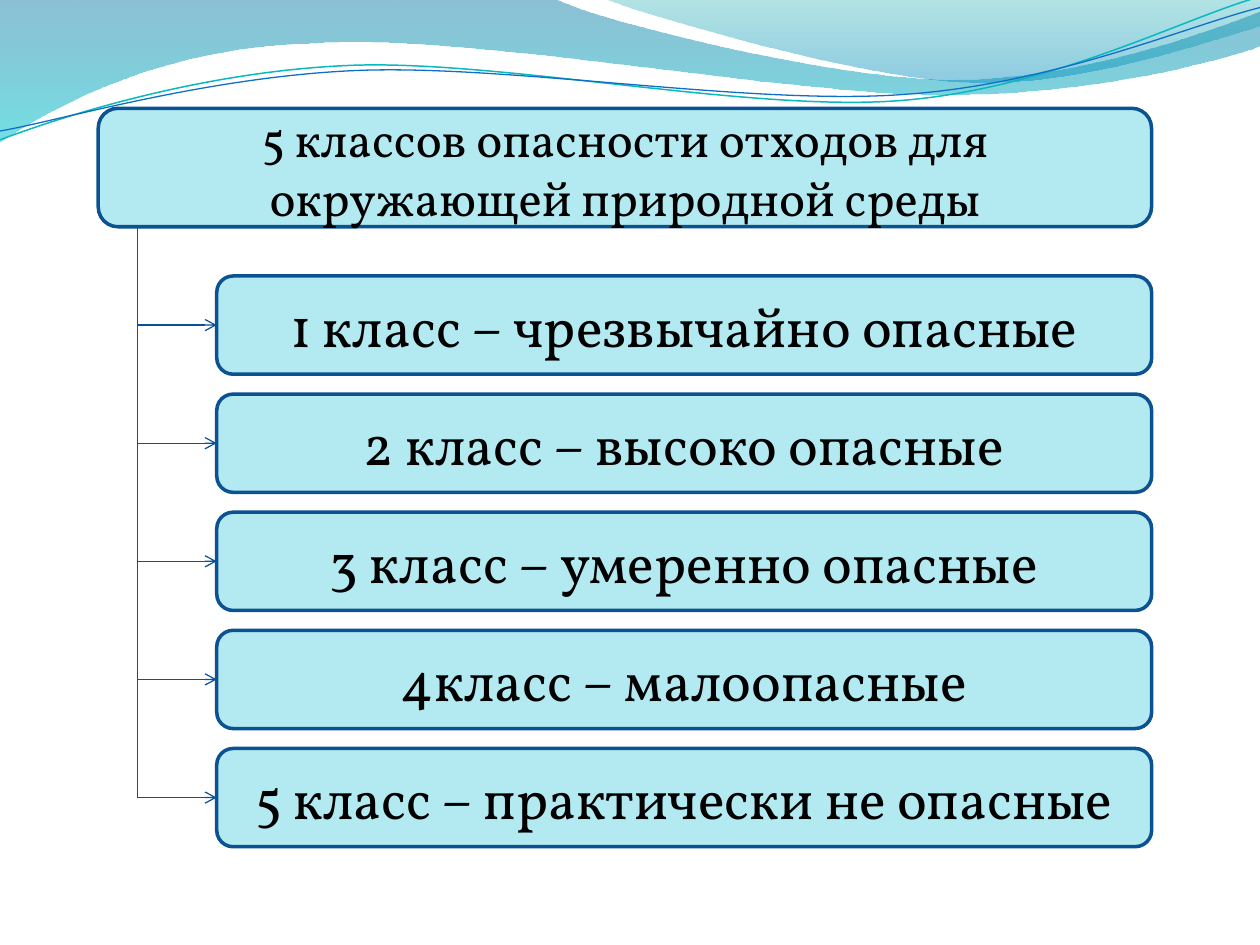
from lxml.etree import SubElement
from pptx import Presentation
from pptx.dml.color import RGBColor
from pptx.enum.shapes import MSO_CONNECTOR as Connector, MSO_SHAPE as Shape
from pptx.enum.text import MSO_ANCHOR as Anchor, PP_ALIGN as Align
from pptx.oxml.ns import qn
from pptx.util import Inches, Pt

FONT = "Vollkorn"
BLACK = RGBColor(0x00, 0x00, 0x00)
BOX_FILL = RGBColor(0xB3, 0xEA, 0xF2)
BOX_LINE = RGBColor(0x0B, 0x52, 0x92)
ARROW_LINE = RGBColor(0x09, 0x52, 0x95)
WAVE_BLUE = RGBColor(0x00, 0x74, 0xA1)
WAVE_CYAN = RGBColor(0x00, 0xC6, 0xCF)
CREST_TEAL = RGBColor(0x00, 0xA1, 0xA9)
CREST_BLUE = RGBColor(0x00, 0x8B, 0xBF)
CURVE_TEAL = RGBColor(0x0A, 0xB8, 0xBF)
CURVE_BLUE = RGBColor(0x0F, 0x6F, 0xC6)

HEADING = "5 классов опасности отходов для окружающей природной среды"
CLASSES = [
    "1 класс – чрезвычайно опасные",
    "2 класс – высоко опасные",
    "3 класс – умеренно опасные",
    "4класс – малоопасные",
    "5 класс – практически не опасные",
]

# Each outline is a start point, then lines (x, y) and
# Bezier curves (two control points and an end point), in inches.
WAVE = [
    (0, 0), (4.4, -0.01),
    (4.76, 0.17, 6.64, 0.63, 7.58, 0.63), (8.53, 0.63, 9.58, 0.26, 10, 0.09),
    (10.01, 0.36),
    (9.83, 0.44, 8.7, 0.76, 7.46, 0.75), (6.22, 0.75, 3.82, 0.28, 2.57, 0.34),
    (1.29, 0.36, 0.46, 0.83, -0.01, 1.13),
]
CREST = [
    (4.79, -0.01),
    (5.09, 0.11, 6.82, 0.62, 7.69, 0.65), (8.56, 0.69, 9.61, 0.32, 10, 0.21),
    (10, 0),
]
TEAL_CURVE = [
    (0, 1.11),
    (0.48, 0.93, 1.58, 0.57, 2.77, 0.52), (3.95, 0.47, 5.93, 0.89, 7.13, 0.8),
    (8.33, 0.71, 9.38, 0.15, 9.98, -0.02),
]
BLUE_CURVE = [
    (0, 1.04),
    (0.47, 0.96, 1.64, 0.61, 2.83, 0.56), (4.03, 0.51, 5.97, 0.84, 7.17, 0.75),
    (8.36, 0.67, 9.41, 0.21, 10, 0.06),
]


def add_outline(slide, left, top, outline, close):
    """Build the outline from all its points, then bend the curve segments."""
    points = [(left + Inches(x), top + Inches(y))
              for segment in outline
              for x, y in zip(segment[::2], segment[1::2])]
    builder = slide.shapes.build_freeform(*points[0])
    builder.add_line_segments(points[1:], close=close)
    shape = builder.convert_to_shape()
    shape.shadow.inherit = False

    line_nodes = iter(list(shape._element.spPr.iter(qn("a:lnTo"))))
    for segment in outline[1:]:
        node = next(line_nodes)
        if len(segment) == 6:
            node.tag = qn("a:cubicBezTo")
            for _ in range(2):
                extra = next(line_nodes)
                node.append(extra[0])
                extra.getparent().remove(extra)
    return shape


def add_wave(slide, left, top, outline, stops):
    """Add an area with a vertical gradient of (colour, opacity percent) stops."""
    wave = add_outline(slide, left, top, outline, close=True)
    wave.line.fill.background()
    wave.fill.gradient()
    wave.fill.gradient_angle = 270
    for stop, (color, _) in zip(wave.fill.gradient_stops, stops):
        stop.color.rgb = color
    for node, (_, opacity) in zip(wave._element.spPr.iter(qn("a:srgbClr")), stops):
        SubElement(node, qn("a:alpha"), val=str(opacity * 1000))


def add_curve(slide, left, top, outline, color, width):
    curve = add_outline(slide, left, top, outline, close=False)
    curve.fill.background()
    curve.line.color.rgb = color
    curve.line.width = Pt(width)


def add_wave_band(slide, left, top):
    add_wave(slide, left, top, WAVE, [(WAVE_BLUE, 45), (WAVE_CYAN, 55)])
    add_wave(slide, left, top, CREST, [(CREST_TEAL, 30), (CREST_BLUE, 45)])
    add_curve(slide, left, top, TEAL_CURVE, CURVE_TEAL, 0.85)
    add_curve(slide, left, top, BLUE_CURVE, CURVE_BLUE, 0.75)


def write_text(shape, text, *, size, color=BLACK, font=FONT, align=Align.CENTER):
    frame = shape.text_frame
    frame.word_wrap = True
    frame.vertical_anchor = Anchor.MIDDLE
    paragraph = frame.paragraphs[0]
    paragraph.alignment = align
    run = paragraph.add_run()
    run.text = text
    run.font.name = font
    run.font.size = Pt(size)
    run.font.color.rgb = color


def add_box(slide, left, top, width, height, text, size):
    box = slide.shapes.add_shape(Shape.ROUNDED_RECTANGLE, left, top, width, height)
    box.shadow.inherit = False
    box.fill.solid()
    box.fill.fore_color.rgb = BOX_FILL
    box.line.color.rgb = BOX_LINE
    box.line.width = Pt(2)
    write_text(box, text, size=size)


def add_connector(slide, x1, y1, x2, y2, arrow=False):
    connector = slide.shapes.add_connector(Connector.STRAIGHT, x1, y1, x2, y2)
    connector.line.color.rgb = ARROW_LINE
    connector.line.width = Pt(0.75)
    if arrow:
        SubElement(connector.line._get_or_add_ln(), qn("a:tailEnd"), type="arrow")
    SubElement(connector._element.spPr, qn("a:effectLst"))


def add_class_tree(slide, left, top, width, height):
    """Add the trunk at the left edge and one arrow and box for each class."""
    first_gap, indent, box_height = Inches(0.39), Inches(0.63), Inches(0.78)
    pitch = (height - first_gap - box_height) / (len(CLASSES) - 1)
    box_tops = [round(top + first_gap + index * pitch) for index in range(len(CLASSES))]
    middles = [box_top + box_height // 2 for box_top in box_tops]

    for label, box_top in zip(CLASSES, box_tops):
        add_box(slide, left + indent, box_top, width - indent, box_height, label, 32)
    add_connector(slide, left, top, left, middles[-1])
    for middle in middles:
        add_connector(slide, left, middle, left + indent, middle, arrow=True)


def main():
    deck = Presentation()
    deck.slide_width, deck.slide_height = Inches(10), Inches(7.5)
    slide = deck.slides.add_slide(deck.slide_layouts[6])
    add_wave_band(slide, Inches(0), Inches(0))
    add_box(slide, Inches(0.78), Inches(0.86), Inches(8.36), Inches(0.94), HEADING, 28)
    add_class_tree(slide, Inches(1.09), Inches(1.8), Inches(8.05), Inches(4.92))
    deck.save("out.pptx")


if __name__ == "__main__":
    main()
